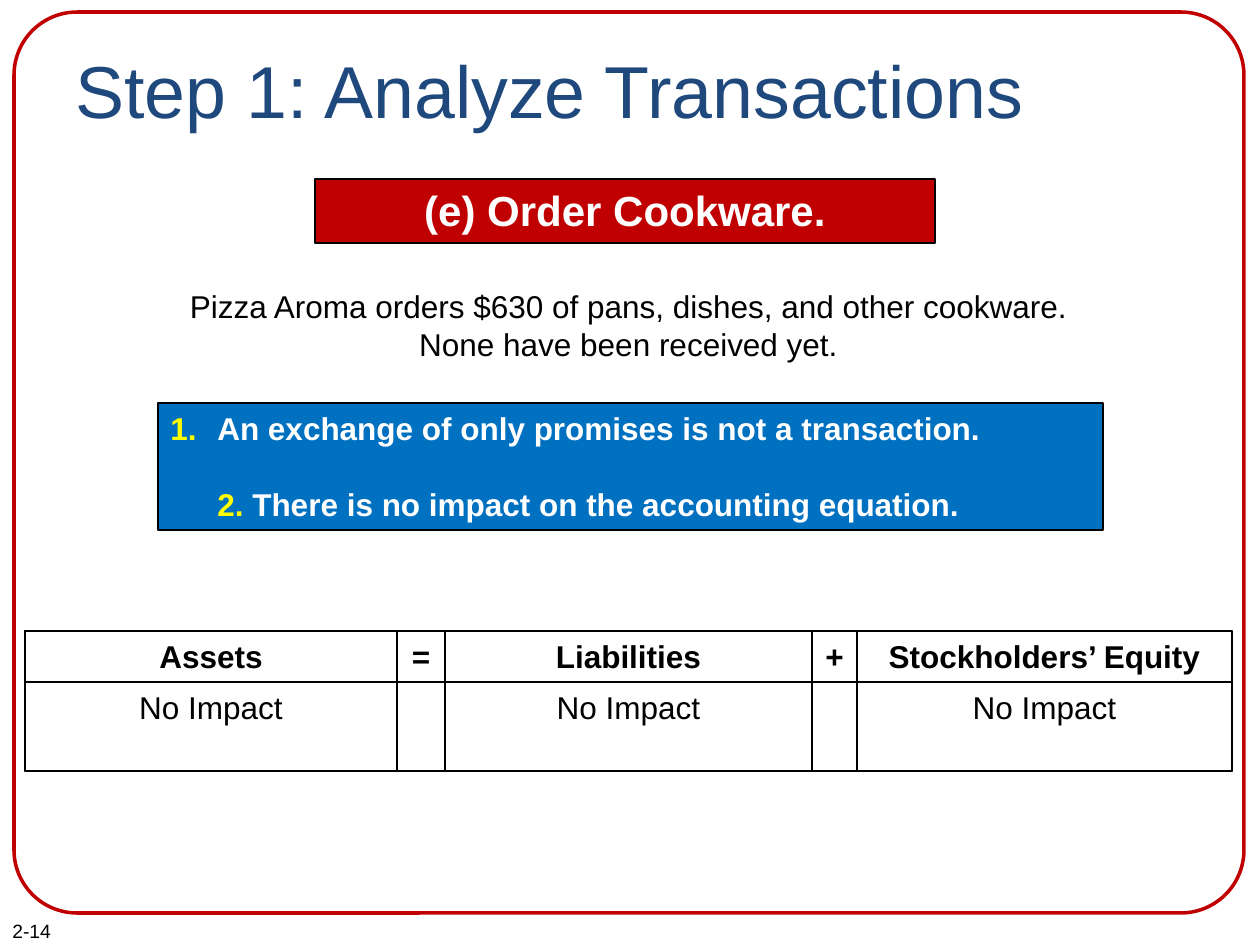
from dataclasses import dataclass

from lxml import etree
from pptx import Presentation
from pptx.dml.color import RGBColor
from pptx.enum import shapes, text
from pptx.oxml import ns
from pptx.util import Emu, Pt

EMU_PER_PX = 914400 / 126
BLACK = RGBColor(0x00, 0x00, 0x00)
WHITE = RGBColor(0xFF, 0xFF, 0xFF)
RED = RGBColor(0xC0, 0x00, 0x00)
BLUE = RGBColor(0x00, 0x70, 0xC0)
NAVY = RGBColor(0x1F, 0x49, 0x7D)
YELLOW = RGBColor(0xFF, 0xFF, 0x00)

LEFT, CENTER = text.PP_ALIGN.LEFT, text.PP_ALIGN.CENTER
RECTANGLE = shapes.MSO_SHAPE.RECTANGLE
LIST_INDENT = 47


@dataclass(frozen=True)
class Box:
    left: int
    top: int
    width: int
    height: int


@dataclass(frozen=True)
class TextStyle:
    size: int
    color: RGBColor = BLACK
    bold: bool = False
    align: text.PP_ALIGN = LEFT


@dataclass(frozen=True)
class TextBlock:
    box: Box
    wording: str
    style: TextStyle
    top_inset: int = 6


@dataclass(frozen=True)
class Column:
    left: int
    width: int


@dataclass(frozen=True)
class EquationRow:
    """A full-width band with cells on top; the band carries its own wording."""
    top: int
    height: int
    bold: bool
    band: str
    cells: dict[str, str]


TEXT_BLOCKS = (
    TextBlock(Box(0, 913, 179, 36), "2-14", TextStyle(11)),
    TextBlock(Box(63, 38, 1134, 157), "Step 1: Analyze Transactions",
              TextStyle(42, NAVY), top_inset=7),
    TextBlock(Box(160, 281, 937, 89),
              "Pizza Aroma orders $630 of pans, dishes, and other cookware. "
              "None have been received yet.", TextStyle(18, align=CENTER)),
)
BAND = Column(25, 1207)
COLUMNS = {
    "assets": Column(25, 372),
    "equals": Column(397, 48),
    "liabilities": Column(445, 367),
    "equity": Column(857, 375),
    "plus": Column(812, 45),
}
EQUATION_ROWS = (
    EquationRow(631, 51, True, "Liabilities",
                {"assets": "Assets", "equals": "=",
                 "equity": "Stockholders’ Equity", "plus": "+"}),
    EquationRow(682, 89, False, "",
                dict.fromkeys(("assets", "liabilities", "equity"), "No Impact")),
)


def px(length: int) -> Emu:
    return Emu(round(length * EMU_PER_PX))


def place(box: Box) -> tuple:
    return px(box.left), px(box.top), px(box.width), px(box.height)


def add_run(paragraph, wording: str, style: TextStyle) -> None:
    paragraph.alignment = style.align
    run = paragraph.add_run()
    run.text = wording
    formats = {"name": "Arial", "size": Pt(style.size), "bold": style.bold}
    for name, value in formats.items():
        setattr(run.font, name, value)
    run.font.color.rgb = style.color


def prepare_frame(frame, top_inset: int = 6) -> None:
    formats = {"word_wrap": True, "vertical_anchor": text.MSO_ANCHOR.TOP,
               "margin_top": px(top_inset)}
    for name, value in formats.items():
        setattr(frame, name, value)


def add_text(slide, block: TextBlock) -> None:
    frame = slide.shapes.add_textbox(*place(block.box)).text_frame
    prepare_frame(frame, block.top_inset)
    add_run(frame.paragraphs[0], block.wording, block.style)


def add_panel(slide, kind, box: Box, fill: RGBColor | None,
              line: RGBColor, line_width: float):
    panel = slide.shapes.add_shape(kind, *place(box))
    panel.shadow.inherit = False
    if fill is None:
        panel.fill.background()
    else:
        panel.fill.solid()
        panel.fill.fore_color.rgb = fill
    panel.line.color.rgb = line
    panel.line.width = Pt(line_width)
    prepare_frame(panel.text_frame)
    return panel


def add_points(frame) -> None:
    """Write the numbered first point and the indented second point."""
    white, yellow = TextStyle(18, WHITE, True), TextStyle(18, YELLOW, True)
    first, second = frame.paragraphs[0], frame.add_paragraph()
    add_run(first, "An exchange of only promises is not a transaction.", white)
    add_run(second, "2. ", yellow)
    add_run(second, "There is no impact on the accounting equation.", white)
    second.space_before = Pt(22)
    for paragraph, indent in ((first, -LIST_INDENT), (second, 0)):
        properties = paragraph._p.get_or_add_pPr()
        properties.set("marL", str(px(LIST_INDENT)))
        properties.set("indent", str(px(indent)))
    properties = first._p.get_or_add_pPr()
    bullet_color = etree.SubElement(properties, ns.qn("a:buClr"))
    etree.SubElement(bullet_color, ns.qn("a:srgbClr"), val=str(YELLOW))
    etree.SubElement(properties, ns.qn("a:buFont"), typeface="+mj-lt")
    etree.SubElement(properties, ns.qn("a:buAutoNum"), type="arabicPeriod")


def add_equation_row(slide, row: EquationRow) -> None:
    style = TextStyle(18, bold=row.bold, align=CENTER)
    cells = [(COLUMNS[name], wording) for name, wording in row.cells.items()]
    for column, wording in [(BAND, row.band), *cells]:
        box = Box(column.left, row.top, column.width, row.height)
        panel = add_panel(slide, RECTANGLE, box, None, BLACK, 1.5)
        if wording:
            add_run(panel.text_frame.paragraphs[0], wording, style)


def main() -> None:
    presentation = Presentation()
    presentation.slide_width, presentation.slide_height = px(1260), px(945)
    slide = presentation.slides.add_slide(presentation.slide_layouts[6])

    frame = add_panel(slide, shapes.MSO_SHAPE.ROUNDED_RECTANGLE,
                      Box(14, 12, 1230, 901), None, RED, 2)
    frame.adjustments[0] = 0.07
    for block in TEXT_BLOCKS:
        add_text(slide, block)

    banner = add_panel(slide, RECTANGLE, Box(315, 179, 620, 64), RED, BLACK, 0.75)
    add_run(banner.text_frame.paragraphs[0], "(e) Order Cookware.",
            TextStyle(24, WHITE, True, CENTER))
    points = add_panel(slide, RECTANGLE, Box(158, 403, 945, 127), BLUE, BLACK, 0.75)
    add_points(points.text_frame)
    for row in EQUATION_ROWS:
        add_equation_row(slide, row)

    presentation.save("out.pptx")


if __name__ == "__main__":
    main()
